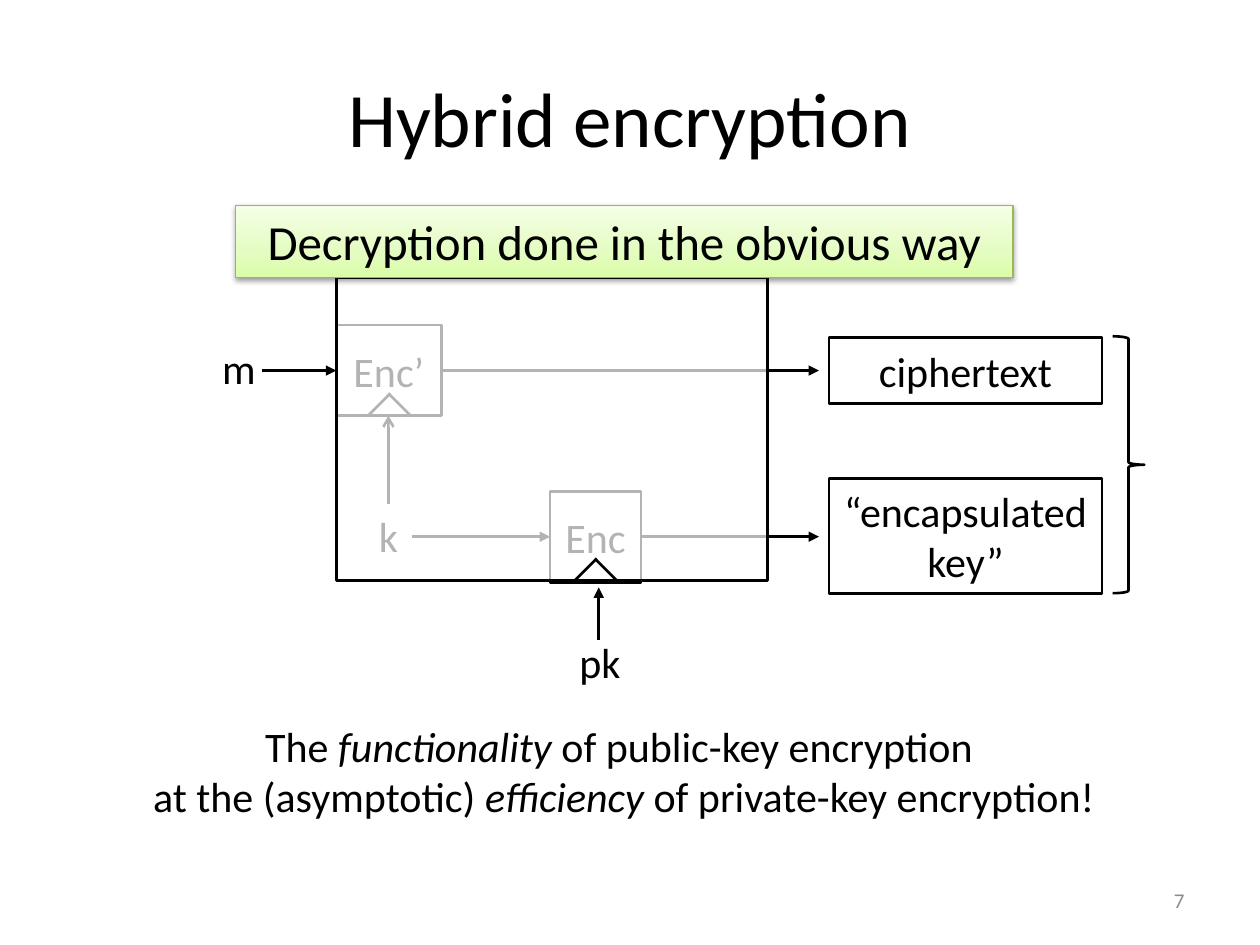
"""Builds the hybrid encryption diagram slide."""
from dataclasses import dataclass
from typing import NamedTuple

from lxml.etree import SubElement
from pptx import Presentation
from pptx.dml.color import RGBColor
from pptx.enum.shapes import MSO_CONNECTOR, MSO_SHAPE
from pptx.enum.text import MSO_ANCHOR, MSO_AUTO_SIZE, PP_ALIGN
from pptx.oxml import parse_xml
from pptx.oxml.ns import nsdecls, qn
from pptx.util import Cm, Pt


@dataclass(frozen=True)
class Theme:
    font: str = "Calibri"
    ink: str = "000000"
    paper: str = "FFFFFF"
    muted: str = "8C8C8C"
    banner_edge: str = "98B955"
    banner_stops: tuple = ((0, "DAFDA7"), (35, "E4FCC2"), (100, "F5FFE7"))
    title: int = 44
    banner: int = 28
    body: int = 24
    footer: int = 12
    stroke: float = 1.5
    thin: float = 0.75
    veil_opacity: int = 70


class Frame(NamedTuple):
    left: float
    top: float
    width: float
    height: float


class Label(NamedTuple):
    text: str
    frame: Frame
    size: int
    color: str
    align: PP_ALIGN = PP_ALIGN.LEFT
    anchor: MSO_ANCHOR = MSO_ANCHOR.TOP
    wrap: bool = False


class Box(NamedTuple):
    text: str
    frame: Frame
    filled: bool = False


class Arrow(NamedTuple):
    start: tuple
    end: tuple
    head: str = "triangle"


class Caret(NamedTuple):
    center: float
    base: float


THEME = Theme()
MESSAGE_LANE = 7.47
KEY_LANE = 10.82
BODY_LEFT = 6.78
OUTPUT_LEFT = 16.71
ARROW_END = 16.51
KEY_X = 7.83
PUBLIC_KEY_X = 12.07

CARETS = [Caret(7.85, 8.38), Caret(12.01, 11.71)]
LABELS = [
    Label("Hybrid encryption", Frame(1.27, 0.76, 22.86, 3.18), THEME.title, THEME.ink,
          PP_ALIGN.CENTER, MSO_ANCHOR.MIDDLE, True),
    Label("7", Frame(18.2, 17.65, 5.93, 1.01), THEME.footer, THEME.muted,
          PP_ALIGN.RIGHT, MSO_ANCHOR.MIDDLE, True),
    Label("k", Frame(7.39, 10.16, 0.89, 1.28), THEME.body, THEME.ink),
    Label("pk", Frame(11.43, 12.7, 1.35, 1.28), THEME.body, THEME.ink),
    Label("m", Frame(4.23, 6.78, 1.2, 1.28), THEME.body, THEME.ink),
]
BOXES = [
    Box("ciphertext", Frame(OUTPUT_LEFT, 6.81, 5.51, 1.32), True),
    Box("“encapsulated key”", Frame(OUTPUT_LEFT, 9.65, 5.51, 2.31), True),
    Box("Enc", Frame(11.09, 9.91, 1.83, 1.83)),
    Box("Enc’", Frame(BODY_LEFT, 6.55, 2.12, 1.83)),
]
ARROWS = [
    Arrow((5.28, MESSAGE_LANE), (BODY_LEFT, MESSAGE_LANE)),
    Arrow((8.89, MESSAGE_LANE), (ARROW_END, MESSAGE_LANE)),
    Arrow((8.31, KEY_LANE), (11.09, KEY_LANE)),
    Arrow((12.9, KEY_LANE), (ARROW_END, KEY_LANE)),
    Arrow((PUBLIC_KEY_X, 12.9), (PUBLIC_KEY_X, 11.84)),
    Arrow((KEY_X, 10.16), (KEY_X, 8.38), "arrow"),
]
SUMMARY_FRAME = Frame(2.72, 14.4, 19.71, 2.31)
SUMMARY = [
    ("The ", "functionality", " of public-key encryption "),
    ("at the (asymptotic) ", "efficiency", " of private-key encryption!"),
]


def lengths(frame: Frame) -> list:
    return [Cm(value) for value in frame]


def style_paragraph(paragraph, size: int, color: str, align: PP_ALIGN) -> None:
    paragraph.alignment = align
    paragraph.font.name = THEME.font
    paragraph.font.size = Pt(size)
    paragraph.font.color.rgb = RGBColor.from_string(color)


def add_text_box(slide, frame: Frame, wrap: bool):
    text_frame = slide.shapes.add_textbox(*lengths(frame)).text_frame
    text_frame.word_wrap = wrap
    text_frame.auto_size = MSO_AUTO_SIZE.NONE if wrap else MSO_AUTO_SIZE.SHAPE_TO_FIT_TEXT
    return text_frame


def add_label(slide, label: Label) -> None:
    text_frame = add_text_box(slide, label.frame, label.wrap)
    text_frame.vertical_anchor = label.anchor
    text_frame.text = label.text
    style_paragraph(text_frame.paragraphs[0], label.size, label.color, label.align)


def add_summary(slide) -> None:
    text_frame = add_text_box(slide, SUMMARY_FRAME, False)
    for index, (before, emphasis, after) in enumerate(SUMMARY):
        paragraph = text_frame.add_paragraph() if index else text_frame.paragraphs[0]
        style_paragraph(paragraph, THEME.body, THEME.ink, PP_ALIGN.CENTER)
        for text in (before, emphasis, after):
            run = paragraph.add_run()
            run.text = text
            if text == emphasis:
                run.font.italic = True


def add_outline(slide, kind: MSO_SHAPE, frame: Frame, filled: bool = False):
    shape = slide.shapes.add_shape(kind, *lengths(frame))
    shape.shadow.inherit = False
    if filled:
        shape.fill.solid()
        shape.fill.fore_color.rgb = RGBColor.from_string(THEME.paper)
    else:
        shape.fill.background()
    shape.line.color.rgb = RGBColor.from_string(THEME.ink)
    shape.line.width = Pt(THEME.stroke)
    return shape


def add_box(slide, box: Box) -> None:
    text_frame = add_outline(slide, MSO_SHAPE.RECTANGLE, box.frame, box.filled).text_frame
    text_frame.text = box.text
    text_frame.vertical_anchor = MSO_ANCHOR.MIDDLE
    style_paragraph(text_frame.paragraphs[0], THEME.body, THEME.ink, PP_ALIGN.CENTER)


def add_veil(slide, frame: Frame) -> None:
    veil = add_outline(slide, MSO_SHAPE.RECTANGLE, frame, True)
    color = veil.fill._xPr.find(qn("a:solidFill"))[0]
    SubElement(color, qn("a:alpha"), val=str(THEME.veil_opacity * 1000))


def add_line(slide, start: tuple, end: tuple, head: str = "") -> None:
    points = [Cm(value) for value in (*start, *end)]
    connector = slide.shapes.add_connector(MSO_CONNECTOR.STRAIGHT, *points)
    connector.line.color.rgb = RGBColor.from_string(THEME.ink)
    connector.line.width = Pt(THEME.stroke)
    if head:
        SubElement(connector.line._get_or_add_ln(), qn("a:tailEnd"), type=head)
    SubElement(connector._element.spPr, qn("a:effectLst"))


def add_caret(slide, caret: Caret) -> None:
    for side in (-1, 1):
        add_line(slide, (caret.center + side * 0.43, caret.base),
                 (caret.center - side * 0.02, caret.base - 0.45))


def add_banner(slide, text: str, frame: Frame) -> None:
    banner = add_outline(slide, MSO_SHAPE.RECTANGLE, frame)
    banner.line.color.rgb = RGBColor.from_string(THEME.banner_edge)
    banner.line.width = Pt(THEME.thin)
    stops = "".join(f'<a:gs pos="{position * 1000}"><a:srgbClr val="{color}"/></a:gs>'
                    for position, color in THEME.banner_stops)
    properties = banner._element.spPr
    properties.replace(properties.find(qn("a:noFill")), parse_xml(
        f'<a:gradFill {nsdecls("a")}><a:gsLst>{stops}</a:gsLst>'
        '<a:lin ang="16200000" scaled="0"/></a:gradFill>'))
    properties.find(qn("a:effectLst")).append(parse_xml(
        f'<a:outerShdw {nsdecls("a")} blurRad="{Pt(3.1)}" dist="{Pt(1.6)}" dir="5400000" '
        f'rotWithShape="0"><a:srgbClr val="{THEME.ink}"><a:alpha val="38000"/></a:srgbClr>'
        '</a:outerShdw>'))
    banner.text_frame.text = text
    banner.text_frame.vertical_anchor = MSO_ANCHOR.TOP
    style_paragraph(banner.text_frame.paragraphs[0], THEME.banner, THEME.ink, PP_ALIGN.CENTER)


def main() -> None:
    presentation = Presentation()
    presentation.slide_width, presentation.slide_height = Cm(25.4), Cm(19.05)
    slide = presentation.slides.add_slide(presentation.slide_layouts[6])
    inner_caret, public_caret = CARETS
    add_caret(slide, inner_caret)
    for label in LABELS:
        add_label(slide, label)
    for arrow in ARROWS:
        add_line(slide, *arrow)
    for box in BOXES:
        add_box(slide, box)
    add_summary(slide)
    add_veil(slide, Frame(BODY_LEFT, 5.59, 8.69, 6.12))
    add_caret(slide, public_caret)
    add_outline(slide, MSO_SHAPE.RIGHT_BRACE, Frame(22.43, 6.78, 0.64, 5.18))
    add_banner(slide, "Decryption done in the obvious way", Frame(4.75, 4.14, 15.67, 1.45))
    presentation.save("out.pptx")


if __name__ == "__main__":
    main()
